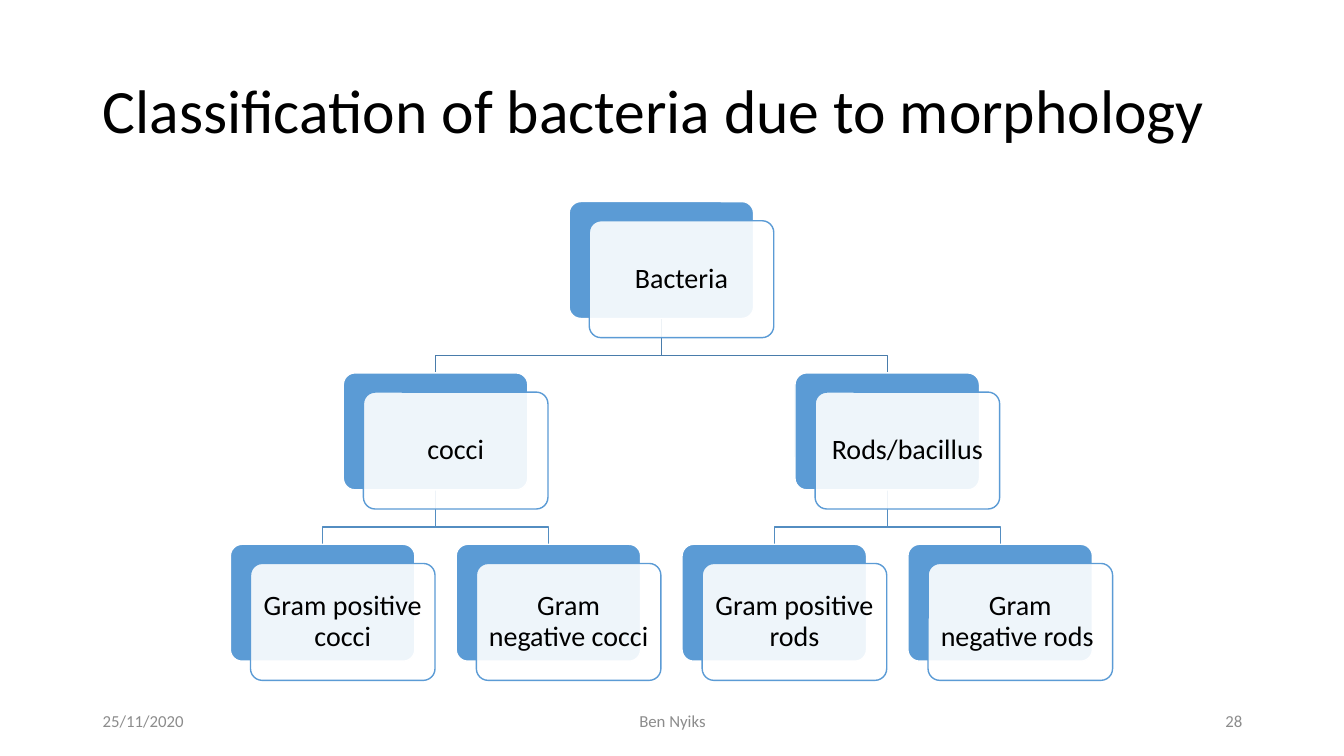
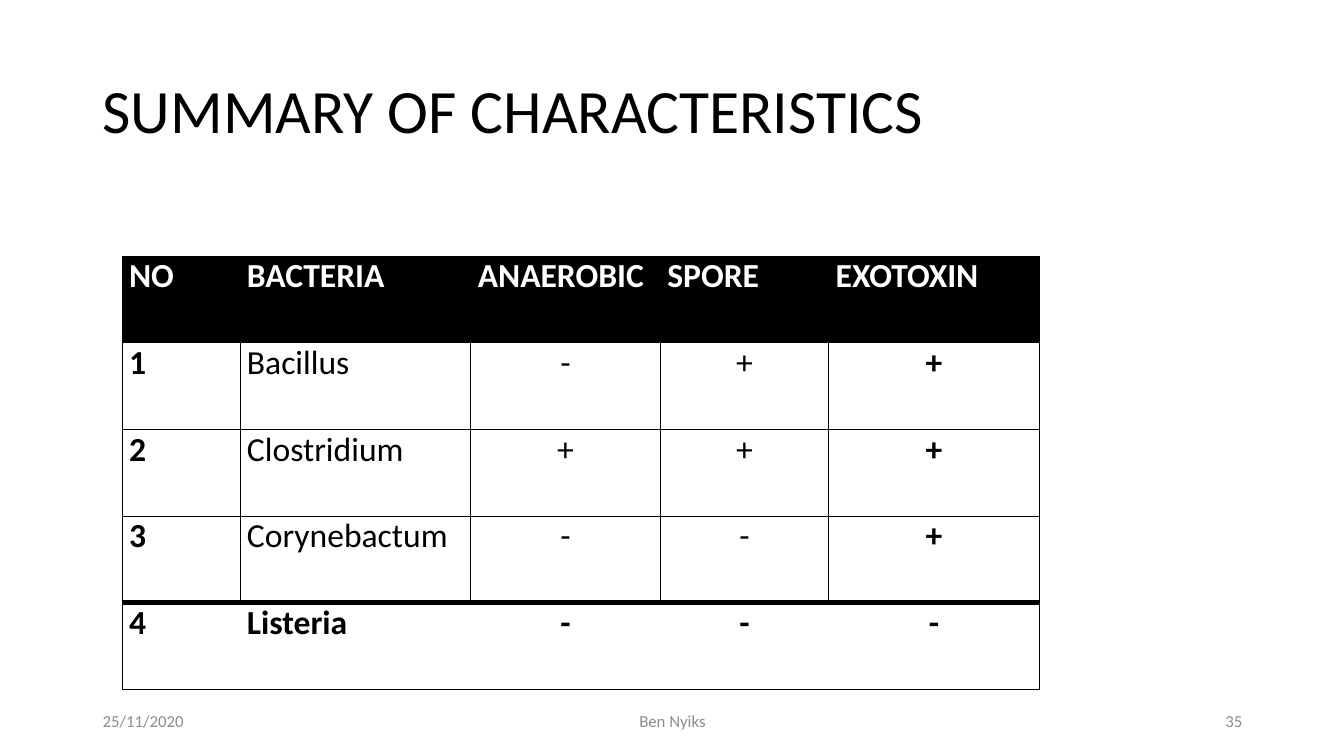
"""Build two slides: a tree of bacteria by morphology and a table of characteristics."""
from dataclasses import dataclass

from lxml import etree
from pptx import Presentation
from pptx.dml.color import RGBColor
from pptx.enum.shapes import MSO_SHAPE
from pptx.enum.text import MSO_ANCHOR, PP_ALIGN
from pptx.oxml.ns import qn
from pptx.util import Inches, Pt

LEFT, CENTER, RIGHT = PP_ALIGN.LEFT, PP_ALIGN.CENTER, PP_ALIGN.RIGHT
TOP, MIDDLE = MSO_ANCHOR.TOP, MSO_ANCHOR.MIDDLE
ROUNDED = MSO_SHAPE.ROUNDED_RECTANGLE


@dataclass(frozen=True)
class Theme:
    font: str = "Calibri"
    black: RGBColor = RGBColor(0x00, 0x00, 0x00)
    white: RGBColor = RGBColor(0xFF, 0xFF, 0xFF)
    blue: RGBColor = RGBColor(0x5B, 0x9B, 0xD5)
    gray: RGBColor = RGBColor(0x8C, 0x8C, 0x8C)
    upper_branch: RGBColor = RGBColor(0x49, 0x7C, 0xAB)
    lower_branch: RGBColor = RGBColor(0x53, 0x8D, 0xC1)
    title_size: int = 44
    table_size: int = 24
    card_size: int = 20
    footer_size: int = 12


THEME = Theme()


def write(frame, text, size, color, align=LEFT, bold=False, anchor=MIDDLE, spacing=1.0):
    frame.word_wrap = True
    frame.vertical_anchor = anchor
    para = frame.paragraphs[0]
    para.alignment = align
    para.line_spacing = spacing
    span = para.add_run()
    span.text = text
    span.font.name = THEME.font
    span.font.size = Pt(size)
    span.font.bold = bold
    span.font.color.rgb = color


def set_borders(cell, widths):
    properties = cell._tc.get_or_add_tcPr()
    for index, (side, width) in enumerate(zip("LRTB", widths)):
        border = etree.Element(qn(f"a:ln{side}"), w=str(Pt(width)))
        if width:
            fill = etree.SubElement(border, qn("a:solidFill"))
            etree.SubElement(fill, qn("a:srgbClr"), val=str(THEME.black))
        else:
            etree.SubElement(border, qn("a:noFill"))
        properties.insert(index, border)


deck = Presentation()
deck.slide_width, deck.slide_height = Inches(13.33), Inches(7.5)

pages = []
for title, number in [
    ("Classification of bacteria due to morphology", "28"),
    ("SUMMARY OF CHARACTERISTICS", "35"),
]:
    page = deck.slides.add_slide(deck.slide_layouts[6])
    pages.append(page)
    box = page.shapes.add_textbox(Inches(0.92), Inches(0.4), Inches(11.5), Inches(1.45))
    write(box.text_frame, title, THEME.title_size, THEME.black, spacing=0.9)
    for left, width, text, align in [
        (0.92, 3, "25/11/2020", LEFT),
        (4.42, 4.5, "Ben Nyiks", CENTER),
        (9.42, 3, number, RIGHT),
    ]:
        box = page.shapes.add_textbox(Inches(left), Inches(6.95), Inches(width), Inches(0.4))
        write(box.text_frame, text, THEME.footer_size, THEME.gray, align)

tree_page, table_page = pages

CARD_WIDTH, CARD_HEIGHT = 1.83, 1.16
COLUMN_STEP, LEVEL_STEP = 2.24, 1.7
TREE_CENTER, TREE_TOP = 6.56, 2
FRONT_SHIFT_X, FRONT_SHIFT_Y = 0.2, 0.19
STEM = 0.37

nodes = [
    ("Bacteria", 0, 0, None),
    ("cocci", -1, 1, 0),
    ("Rods/bacillus", 1, 1, 0),
    ("Gram positive cocci", -1.5, 2, -1),
    ("Gram negative cocci", -0.5, 2, -1),
    ("Gram positive rods", 0.5, 2, 1),
    ("Gram negative rods ", 1.5, 2, 1),
]

for label, column, level, parent_column in nodes:
    if parent_column is None:
        continue
    child_x = Inches(TREE_CENTER + column * COLUMN_STEP)
    parent_x = Inches(TREE_CENTER + parent_column * COLUMN_STEP)
    child_y = Inches(TREE_TOP + level * LEVEL_STEP)
    parent_y = Inches(TREE_TOP + (level - 1) * LEVEL_STEP + CARD_HEIGHT)
    bend_y = parent_y + Inches(STEM)
    outline = tree_page.shapes.build_freeform(parent_x, parent_y)
    outline.add_line_segments(
        [(parent_x, bend_y), (child_x, bend_y), (child_x, child_y)], close=False
    )
    branch = outline.convert_to_shape()
    branch.shadow.inherit = False
    branch.fill.background()
    branch.line.color.rgb = THEME.upper_branch if level == 1 else THEME.lower_branch
    branch.line.width = Pt(1)

for label, column, level, parent_column in nodes:
    left = TREE_CENTER + column * COLUMN_STEP - CARD_WIDTH / 2
    top = TREE_TOP + level * LEVEL_STEP
    for shift_x, shift_y, fill, line in [
        (0, 0, THEME.blue, THEME.white),
        (FRONT_SHIFT_X, FRONT_SHIFT_Y, THEME.white, THEME.blue),
    ]:
        card = tree_page.shapes.add_shape(
            ROUNDED, Inches(left + shift_x), Inches(top + shift_y),
            Inches(CARD_WIDTH), Inches(CARD_HEIGHT),
        )
        card.adjustments[0] = 0.1
        card.shadow.inherit = False
        card.fill.solid()
        card.fill.fore_color.rgb = fill
        card.line.color.rgb = line
        card.line.width = Pt(1)
    tint = card._element.spPr.find(qn("a:solidFill"))[0]
    etree.SubElement(tint, qn("a:alpha"), val="90000")
    frame = card.text_frame
    frame.margin_left = frame.margin_right = Inches(0.08)
    frame.margin_top = frame.margin_bottom = Inches(0.08)
    write(frame, label, THEME.card_size, THEME.black, CENTER, spacing=0.9)

rows = [
    ("NO", "BACTERIA", "ANAEROBIC", "SPORE", "EXOTOXIN"),
    ("1", "Bacillus", "-", "+", "+"),
    ("2", "Clostridium", "+", "+", "+"),
    ("3", "Corynebactum", "-", "-", "+"),
    ("4", "Listeria", "-", "-", "-"),
]
column_widths = [1.17, 2.29, 1.88, 1.67, 2.09]
ROW_HEIGHT = 0.86
THIN, THICK = 0.5, 4
last_row, last_column = len(rows) - 1, len(column_widths) - 1

table = table_page.shapes.add_table(
    len(rows), len(column_widths), Inches(1.21), Inches(2.54),
    Inches(sum(column_widths)), Inches(ROW_HEIGHT * len(rows)),
).table
table.first_row = table.horz_banding = False
for column, width in zip(table.columns, column_widths):
    column.width = Inches(width)

for row_index, row in enumerate(rows):
    table.rows[row_index].height = Inches(ROW_HEIGHT)
    is_header, is_last = row_index == 0, row_index == last_row
    for column_index, text in enumerate(row):
        cell = table.cell(row_index, column_index)
        cell.margin_left = cell.margin_right = Inches(0.07)
        cell.margin_top = cell.margin_bottom = 0
        cell.fill.solid()
        cell.fill.fore_color.rgb = THEME.black if is_header else THEME.white
        write(
            cell.text_frame, text, THEME.table_size,
            THEME.white if is_header else THEME.black,
            CENTER if column_index > 1 and not is_header else LEFT,
            is_header or is_last or column_index in (0, last_column),
            TOP,
        )
        cell.vertical_anchor = TOP
        set_borders(cell, (
            0 if is_last and column_index > 0 else THIN,
            0 if is_last and column_index < last_column else THIN,
            THICK if is_last else THIN,
            THICK if row_index == last_row - 1 else THIN,
        ))

deck.save("out.pptx")
